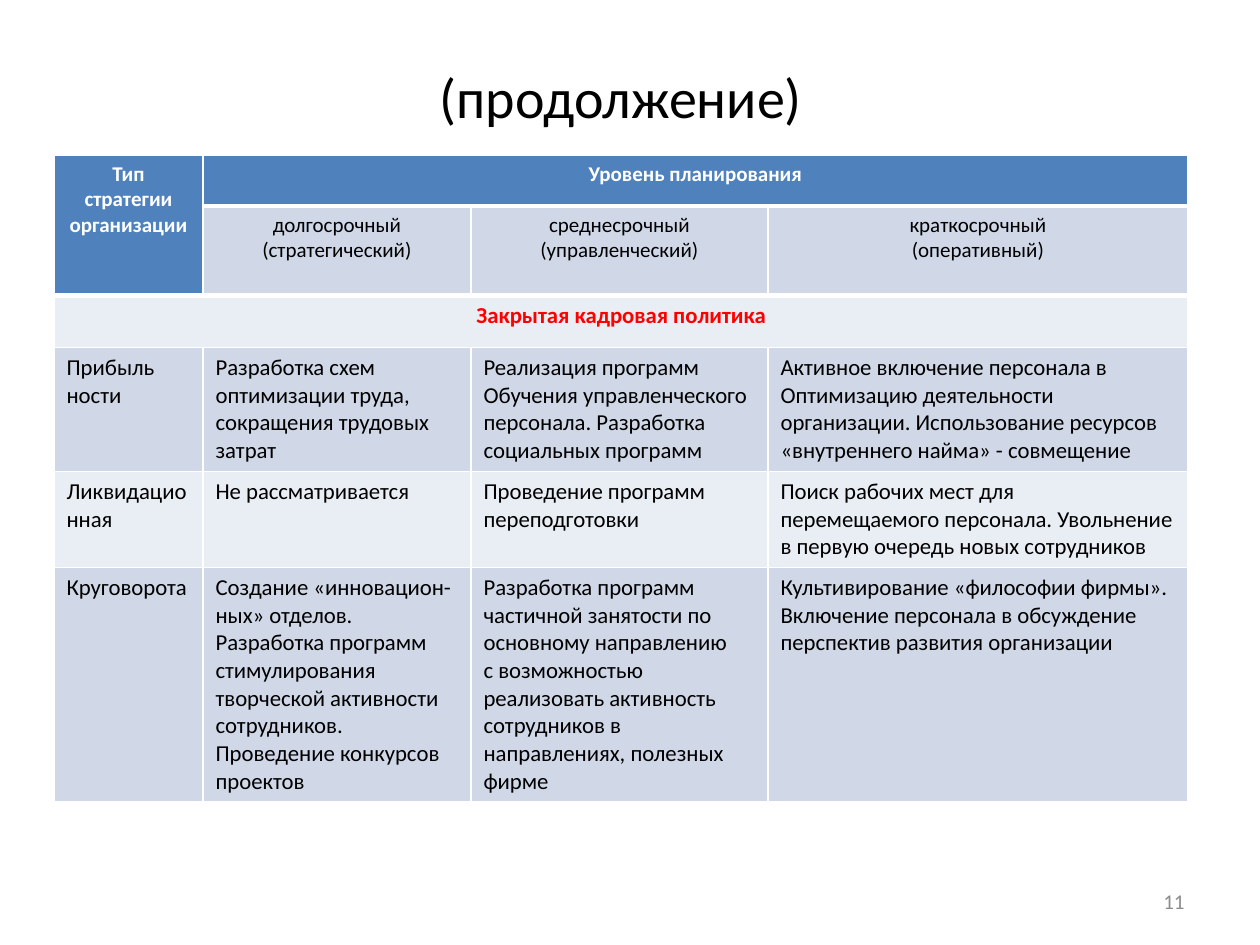
import pptx
import pptx.dml.color
import pptx.enum.text
import pptx.oxml
import pptx.oxml.ns
import pptx.util

# Content: one list of lines per cell
TITLE = "(продолжение)"
PAGE_NUMBER = "11"
CORNER = ["Тип", "стратегии", "организации"]
LEVELS_HEADING = ["Уровень планирования"]
LEVELS = [
    ["долгосрочный", "(стратегический)"],
    ["среднесрочный", "(управленческий)"],
    ["краткосрочный", "(оперативный)"],
]
SECTION = ["Закрытая кадровая политика"]
STRATEGIES = [
    [
        ["Прибыль ности"],
        ["Разработка схем", "оптимизации труда,", "сокращения трудовых затрат"],
        ["Реализация программ", "Обучения управленческого",
         "персонала. Разработка социальных программ"],
        ["Активное включение персонала в", "Оптимизацию деятельности",
         "организации. Использование ресурсов", "«внутреннего найма» - совмещение"],
    ],
    [
        ["Ликвидационная"],
        ["Не рассматривается"],
        ["Проведение программ", "переподготовки"],
        ["Поиск рабочих мест для перемещаемого персонала. Увольнение",
         "в первую очередь новых сотрудников"],
    ],
    [
        ["Круговорота"],
        ["Создание «инновацион- ных» отделов. Разработка программ стимулирования",
         "творческой активности", "сотрудников. Проведение конкурсов проектов"],
        ["Разработка программ", "частичной занятости по", "основному направлению",
         "с возможностью реализовать активность сотрудников в направлениях, полезных",
         "фирме"],
        ["Культивирование «философии фирмы».",
         "Включение персонала в обсуждение перспектив развития организации"],
    ],
]

THEME = {
    "font": "Calibri",
    "title_size": 32, "header_size": 12, "body_size": 13, "number_size": 12,
    "text": "000000", "white": "FFFFFF", "accent": "FF0000", "number": "8C8C8C",
    "header": "4F81BD", "dark_band": "D0D8E8", "light_band": "E9EDF4",
    "thin": 1, "thick": 3,
}

# Geometry in px
SLIDE_SIZE = (1260, 945)
TITLE_BOX = (54, 36, 1134, 120)
TABLE_ORIGIN = (54, 155)
COLUMN_WIDTHS = [149, 268, 297, 420]
ROW_HEIGHTS = [51, 89, 52, 124, 96, 234]
NUMBER_BOX = (903, 876, 294, 50)
HEADER_ROWS = 2

ALIGN = pptx.enum.text.PP_ALIGN
ANCHOR = pptx.enum.text.MSO_ANCHOR


def px(length):
    return pptx.util.Emu(round(length * 914400 / 126))


def color(name):
    return pptx.dml.color.RGBColor.from_string(THEME[name])


def write(frame, lines, size, ink, align, bold=False):
    for index, line in enumerate(lines):
        paragraph = frame.paragraphs[0] if index == 0 else frame.add_paragraph()
        paragraph.alignment = align
        run = paragraph.add_run()
        run.text = line
        run.font.name = THEME["font"]
        run.font.size = pptx.util.Pt(THEME[size])
        run.font.bold = bold
        run.font.color.rgb = color(ink)


def set_borders(cell, bottom):
    properties = cell._tc.get_or_add_tcPr()
    for side in "LRTB":
        width = pptx.util.Pt(THEME[bottom if side == "B" else "thin"])
        properties.append(pptx.oxml.parse_xml(
            f'<a:ln{side} {pptx.oxml.ns.nsdecls("a")} w="{width}"><a:solidFill>'
            f'<a:srgbClr val="{THEME["white"]}"/></a:solidFill></a:ln{side}>'))


def fill_cell(cell, lines, fill, size="body_size", ink="text",
              align=ALIGN.LEFT, bold=False):
    cell.fill.solid()
    cell.fill.fore_color.rgb = color(fill)
    write(cell.text_frame, lines, size, ink, align, bold)


def add_planning_table(slide):
    frame = slide.shapes.add_table(
        len(ROW_HEIGHTS), len(COLUMN_WIDTHS), *map(px, TABLE_ORIGIN),
        px(sum(COLUMN_WIDTHS)), px(sum(ROW_HEIGHTS)))
    table = frame.table
    for column, width in zip(table.columns, COLUMN_WIDTHS):
        column.width = px(width)
    for index, (row, height) in enumerate(zip(table.rows, ROW_HEIGHTS)):
        row.height = px(height)
        for cell in row.cells:
            set_borders(cell, "thick" if index < HEADER_ROWS else "thin")

    # Merged areas
    for first, last in [((0, 0), (1, 0)), ((0, 1), (0, 3)), ((2, 0), (2, 3))]:
        table.cell(*first).merge(table.cell(*last))

    # Headings
    heading = {"size": "header_size", "align": ALIGN.CENTER}
    for column, lines in enumerate([CORNER, LEVELS_HEADING]):
        fill_cell(table.cell(0, column), lines, "header", ink="white", bold=True, **heading)
    for column, lines in enumerate(LEVELS, 1):
        fill_cell(table.cell(1, column), lines, "dark_band", **heading)
    fill_cell(table.cell(2, 0), SECTION, "light_band", ink="accent",
              align=ALIGN.CENTER, bold=True)

    # Strategies in alternating bands
    for row, strategy in enumerate(STRATEGIES, HEADER_ROWS + 1):
        band = "dark_band" if row % 2 else "light_band"
        for column, lines in enumerate(strategy):
            fill_cell(table.cell(row, column), lines, band)


def main():
    presentation = pptx.Presentation()
    presentation.slide_width, presentation.slide_height = map(px, SLIDE_SIZE)
    slide = presentation.slides.add_slide(presentation.slide_layouts[5])

    # Title
    title = slide.shapes.title
    title.left, title.top, title.width, title.height = map(px, TITLE_BOX)
    title.text_frame.vertical_anchor = ANCHOR.MIDDLE
    write(title.text_frame, [TITLE], "title_size", "text", ALIGN.CENTER)

    add_planning_table(slide)

    # Page number
    number = slide.shapes.add_textbox(*map(px, NUMBER_BOX)).text_frame
    number.word_wrap = True
    number.vertical_anchor = ANCHOR.MIDDLE
    write(number, [PAGE_NUMBER], "number_size", "number", ALIGN.RIGHT)

    presentation.save("out.pptx")


if __name__ == "__main__":
    main()
